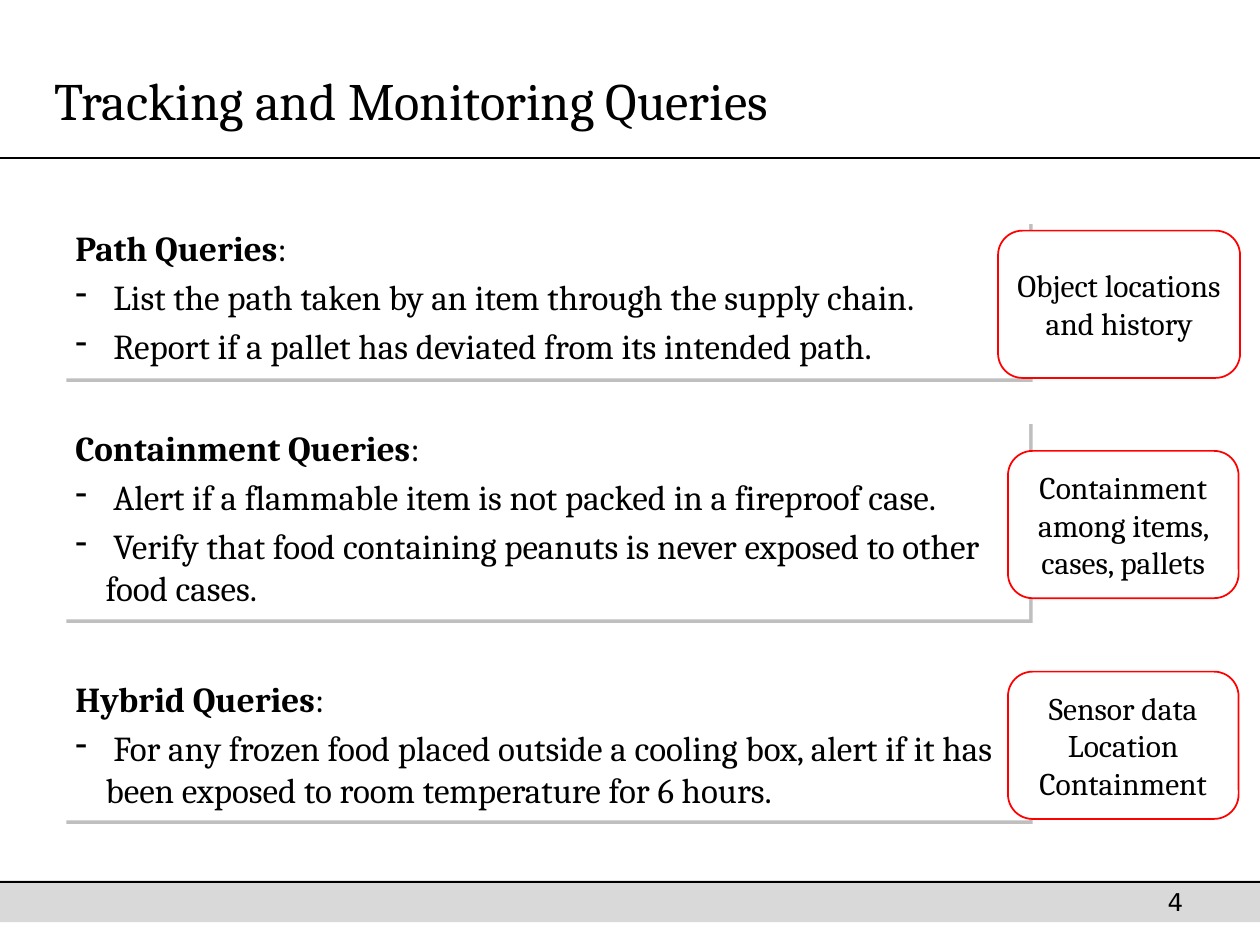
from lxml.etree import SubElement
from pptx import Presentation
from pptx.dml.color import RGBColor
from pptx.enum.shapes import MSO_CONNECTOR, MSO_SHAPE
from pptx.enum.text import MSO_ANCHOR, MSO_AUTO_SIZE, PP_ALIGN
from pptx.oxml.ns import qn
from pptx.util import Cm, Pt

SLIDE_WIDTH, SLIDE_HEIGHT = 25.4, 19.05
SERIF, SANS = "Cambria", "DejaVu Sans"

QUERIES = [
    ((1.27, 4.45, 19.48, 3.18), "Path Queries", [
        "List the path taken by an item through the supply chain.",
        "Report if a pallet has deviated from its intended path.",
    ]),
    ((1.27, 8.48, 19.48, 4.01), "Containment Queries", [
        "Alert if a flammable item is not packed in a fireproof case.",
        "Verify that food containing peanuts is never exposed to other food cases.",
    ]),
    ((1.27, 13.54, 19.48, 3), "Hybrid Queries", [
        "For any frozen food placed outside a cooling box, alert if it has "
        "been exposed to room temperature for 6 hours.",
    ]),
]
REQUIREMENTS = [
    ((20.12, 4.65, 4.88, 2.97), ["Object locations", "and history"]),
    ((20.32, 9.09, 4.65, 2.97), ["Containment among items, cases, pallets"]),
    ((20.32, 13.54, 4.65, 2.97), ["Sensor data", "Location Containment"]),
]


def color(value):
    return RGBColor.from_string(value)


def lengths(box):
    return [Cm(value) for value in box]


def style(paragraph, size, name=SERIF):
    paragraph.font.size = Pt(size)
    paragraph.font.name = name
    paragraph.font.color.rgb = color("000000")


def add_box(slide, preset, box, fill, line=None):
    shape = slide.shapes.add_shape(preset, *lengths(box))
    shape.shadow.inherit = False
    shape.fill.solid()
    shape.fill.fore_color.rgb = color(fill)
    if line:
        shape.line.color.rgb = color(line)
        shape.line.width = Pt(1)
    else:
        shape.line.fill.background()
    shape.text_frame.word_wrap = True
    return shape


def add_rule(slide, top):
    rule = slide.shapes.add_connector(
        MSO_CONNECTOR.STRAIGHT, 0, Cm(top), Cm(SLIDE_WIDTH), Cm(top))
    rule.line.color.rgb = color("000000")
    rule.line.width = Pt(1)
    SubElement(rule._element.spPr, qn("a:effectLst"))


def add_shadow(shape):
    effects = shape._element.spPr.find(qn("a:effectLst"))
    shadow = SubElement(effects, qn("a:outerShdw"), blurRad="0",
                        dist=str(Pt(2.8)), dir="2700000", algn="ctr", rotWithShape="0")
    shade = SubElement(shadow, qn("a:srgbClr"), val="808080")
    SubElement(shade, qn("a:alpha"), val="50000")


def add_dash(paragraph):
    properties = paragraph._p.get_or_add_pPr()
    properties.set("marL", str(Cm(0.61)))
    properties.set("indent", str(-Cm(0.61)))
    SubElement(properties, qn("a:buChar"), char="-")


def add_header(slide, box):
    title = slide.shapes.title
    title.left, title.top, title.width, title.height = lengths(box)
    frame = title.text_frame
    frame.text = "Tracking and Monitoring Queries"
    frame.auto_size = MSO_AUTO_SIZE.NONE
    frame.vertical_anchor = MSO_ANCHOR.MIDDLE
    paragraph = frame.paragraphs[0]
    paragraph.alignment = PP_ALIGN.LEFT
    style(paragraph, 30)
    add_rule(slide, box[1] + 1.91)


def add_footer(slide, box):
    left, top, width, height = box
    add_box(slide, MSO_SHAPE.RECTANGLE, box, "D9D9D9")
    add_rule(slide, top + 0.03)
    number = slide.shapes.add_textbox(*lengths((left + width - 2.11, top, 1.7, height)))
    number.text_frame.word_wrap = True
    number.text_frame.text = "4"
    style(number.text_frame.paragraphs[0], 14, SANS)


def add_query(slide, box, heading, examples):
    shape = add_box(slide, MSO_SHAPE.RECTANGLE, box, "FFFFFF")
    add_shadow(shape)
    frame = shape.text_frame
    frame.vertical_anchor = MSO_ANCHOR.TOP
    title = frame.paragraphs[0]
    run = title.add_run()
    run.text = heading
    run.font.bold = True
    title.add_run().text = ":"
    for example in examples:
        paragraph = frame.add_paragraph()
        paragraph.text = " " + example
        add_dash(paragraph)
        paragraph.space_before = Pt(4)
    for paragraph in frame.paragraphs:
        paragraph.alignment = PP_ALIGN.LEFT
        style(paragraph, 20)


def add_requirement(slide, box, lines):
    shape = add_box(slide, MSO_SHAPE.ROUNDED_RECTANGLE, box, "FFFFFF", "FF0000")
    frame = shape.text_frame
    frame.margin_left = frame.margin_right = 0
    frame.vertical_anchor = MSO_ANCHOR.MIDDLE
    frame.text = "\n".join(lines)
    for paragraph in frame.paragraphs:
        paragraph.alignment = PP_ALIGN.CENTER
        style(paragraph, 18)


def main():
    presentation = Presentation()
    presentation.slide_width = Cm(SLIDE_WIDTH)
    presentation.slide_height = Cm(SLIDE_HEIGHT)
    slide = presentation.slides.add_slide(presentation.slide_layouts[5])
    add_footer(slide, (0, 17.75, SLIDE_WIDTH, 0.84))
    add_header(slide, (0.84, 1.27, 24.56, 1.47))
    for box, heading, examples in QUERIES:
        add_query(slide, box, heading, examples)
    for box, lines in REQUIREMENTS:
        add_requirement(slide, box, lines)
    presentation.save("out.pptx")


if __name__ == "__main__":
    main()
